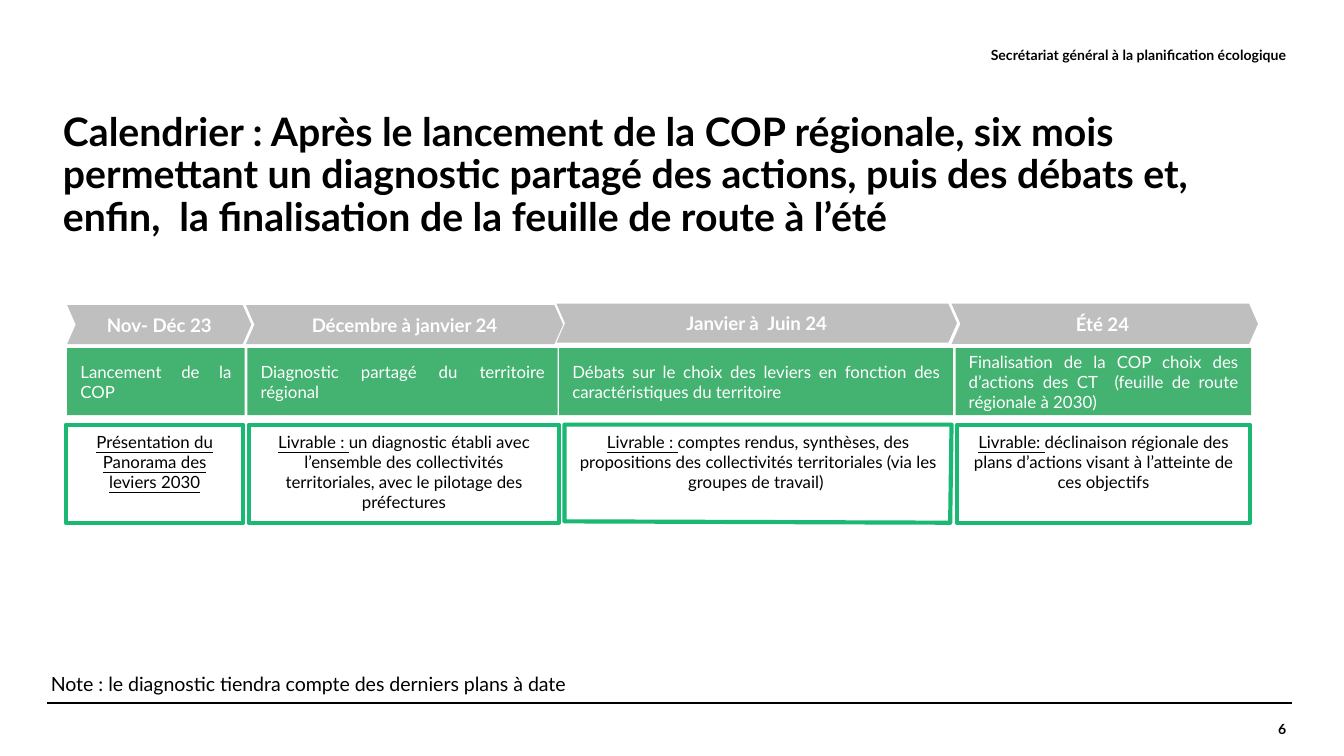
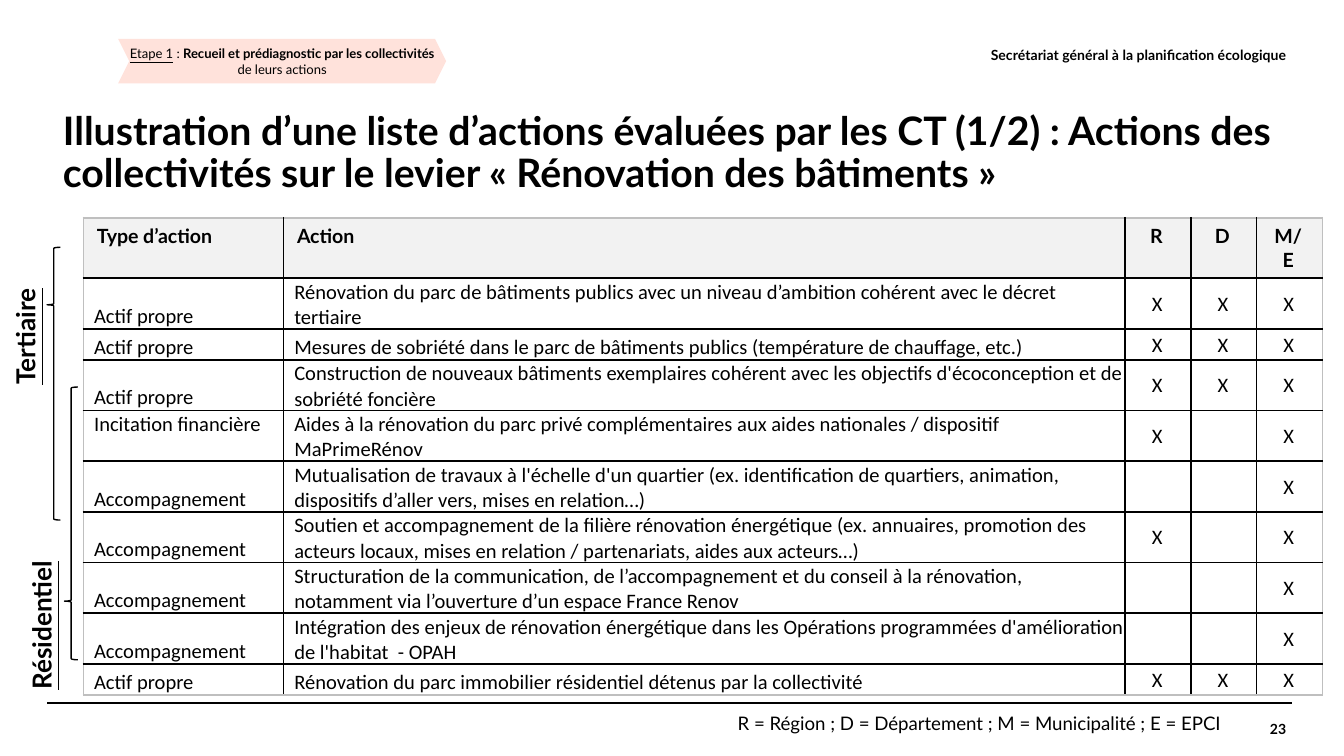
from lxml import etree
from pptx import Presentation
from pptx import util as u
from pptx.dml import color
from pptx.enum import shapes, text
from pptx.oxml import ns

BLACK, WHITE, GREY = "000000", "FFFFFF", "BFBFBF"
PALE_GREY, GREEN, BORDER_GREEN, PINK = "F2F2F2", "44B270", "1AB873", "FFE2DB"
LEFT, CENTER, RIGHT, JUSTIFY = (text.PP_ALIGN.LEFT, text.PP_ALIGN.CENTER,
                                text.PP_ALIGN.RIGHT, text.PP_ALIGN.JUSTIFY)
TOP, MIDDLE, BOTTOM = (text.MSO_ANCHOR.TOP, text.MSO_ANCHOR.MIDDLE,
                       text.MSO_ANCHOR.BOTTOM)
DEFAULT_INSETS = (0.1, 0.05, 0.1, 0.05)

# Timeline stages: chevron box, then left and width of theme and deliverable
STAGES = [
    dict(period="Nov- Déc 23", chevron=(0.5, 2.27, 1.37, 0.29),
         theme="Lancement de la COP", theme_span=(0.5, 1.32),
         deliverable=[("Présentation du Panorama des leviers 2030", {"underline": True})],
         span=(0.49, 1.32)),
    dict(period="Décembre à janvier 24", chevron=(1.83, 2.27, 2.36, 0.29),
         theme="Diagnostic partagé du territoire régional", theme_span=(1.84, 2.31),
         deliverable=[("Livrable : ", {"underline": True}),
                      "un diagnostic établi avec l’ensemble des collectivités "
                      "territoriales, avec le pilotage des préfectures"],
         span=(1.85, 2.31)),
    dict(period="Janvier à  Juin 24", chevron=(4.14, 2.26, 2.98, 0.29),
         theme="Débats sur le choix des leviers en fonction des caractéristiques du territoire",
         theme_span=(4.16, 2.93),
         deliverable=[("Livrable : ", {"underline": True}),
                      "comptes rendus, synthèses, des propositions des collectivités "
                      "territoriales (via les groupes de travail) "],
         span=(4.2, 2.88), slanted=True),
    dict(period="Été 24 ", chevron=(7.08, 2.26, 2.28, 0.3),
         theme="Finalisation de la COP choix des d’actions des CT  "
               "(feuille de route régionale à 2030) ",
         theme_span=(7.11, 2.2),
         deliverable=[("Livrable: ", {"underline": True}),
                      "déclinaison régionale des plans d’actions visant à l’atteinte "
                      "de ces objectifs"],
         span=(7.12, 2.18)),
]

HEADINGS = ["Type d’action", "Action", "R", "D", "M/E"]
# Type of action, action, levels of government concerned
ACTIONS = [
    ("Actif propre", "Rénovation du parc de bâtiments publics avec un niveau d’ambition "
     "cohérent avec le décret tertiaire", "RDM"),
    ("Actif propre", "Mesures de sobriété dans le parc de bâtiments publics "
     "(température de chauffage, etc.)", "RDM"),
    ("Actif propre", "Construction de nouveaux bâtiments exemplaires cohérent avec les "
     "objectifs d'écoconception et de sobriété foncière", "RDM"),
    ("Incitation financière", "Aides à la rénovation du parc privé complémentaires aux "
     "aides nationales / dispositif MaPrimeRénov", "RM"),
    ("Accompagnement", "Mutualisation de travaux à l'échelle d'un quartier (ex. "
     "identification de quartiers, animation, dispositifs d’aller vers, mises en "
     "relation…)", "M"),
    ("Accompagnement", "Soutien et accompagnement de la filière rénovation énergétique "
     "(ex. annuaires, promotion des acteurs locaux, mises en relation / partenariats, "
     "aides aux acteurs…)", "RM"),
    ("Accompagnement", "Structuration de la communication, de l’accompagnement et du "
     "conseil à la rénovation, notamment via l’ouverture d’un espace France Renov", "M"),
    ("Accompagnement", "Intégration des enjeux de rénovation énergétique dans les "
     "Opérations programmées d'amélioration de l'habitat  - OPAH", "M"),
    ("Actif propre", "Rénovation du parc immobilier résidentiel détenus par la "
     "collectivité", "RDM"),
]


def rgb(value):
    return color.RGBColor.from_string(value)


def inches(box):
    return [u.Inches(value) for value in box]


def write(holder, runs, size=9, font="Lato", ink=BLACK, bold=False, align=LEFT,
          anchor=TOP, insets=DEFAULT_INSETS, spacing=None, margin=0):
    """Fill a shape or cell with one paragraph; a run is a string or (string, format)."""
    frame = holder.text_frame
    # A cell keeps its insets and anchor itself, a shape keeps them in its frame
    area = holder if hasattr(holder, "vertical_anchor") else frame
    area.vertical_anchor = anchor
    area.margin_left, area.margin_top, area.margin_right, area.margin_bottom = inches(insets)
    paragraph = frame.paragraphs[0]
    paragraph.alignment = align
    if spacing:
        paragraph.line_spacing = spacing
    if margin:
        paragraph._p.get_or_add_pPr().set("marL", str(u.Inches(margin)))
    for item in [runs] if isinstance(runs, str) else runs:
        words, style = (item, {}) if isinstance(item, str) else item
        if not words:
            continue
        run = paragraph.add_run()
        run.text = words
        run.font.name, run.font.size = font, u.Pt(size)
        run.font.color.rgb = rgb(ink)
        run.font.bold = style.get("bold", bold)
        run.font.underline = style.get("underline", False)


def add_text(slide, box, runs, rotation=0, wrap=True, grow=False, **style):
    shape = slide.shapes.add_textbox(*inches(box))
    shape.text_frame.word_wrap = wrap
    if grow:
        shape.text_frame.auto_size = text.MSO_AUTO_SIZE.SHAPE_TO_FIT_TEXT
    write(shape, runs, **style)
    shape.rotation = rotation


def paint(shape, fill=None, line=None, width=1):
    shape.shadow.inherit = False
    if fill:
        shape.fill.solid()
        shape.fill.fore_color.rgb = rgb(fill)
    else:
        shape.fill.background()
    if line:
        shape.line.color.rgb = rgb(line)
        shape.line.width = u.Pt(width)
    else:
        shape.line.fill.background()


def add_preset(slide, kind, box, adjustments=(), **look):
    shape = slide.shapes.add_shape(kind, *inches(box))
    for index, value in enumerate(adjustments):
        shape.adjustments[index] = value
    paint(shape, **look)
    return shape


def add_frame(slide, number, title, title_box):
    """Parts shared by all slides: rules, page number, header and title."""
    for left in (0.35, 0.39):
        rule = slide.shapes.add_connector(
            shapes.MSO_CONNECTOR.STRAIGHT, *inches((left, 5.23, left + 9.22, 5.23)))
        rule.line.color.rgb = rgb(BLACK)
        rule.line.width = u.Pt(0.8)
        etree.SubElement(rule._element.spPr, ns.qn("a:effectLst"))
    small = dict(size=7.5, bold=True, align=RIGHT, anchor=MIDDLE, insets=(0, 0, 0, 0))
    add_text(slide, (8.09, 5.23, 1.48, 0.39), number, **small)
    add_text(slide, (3.14, 0.21, 6.43, 0.39),
             "Secrétariat général à la planification écologique", **small)
    add_text(slide, title_box, title, size=21, bold=True, anchor=MIDDLE,
             spacing=0.9, margin=0.02)


def add_stage(slide, stage, theme_top, deliverable_top):
    """One column of the timeline: period, theme and deliverable."""
    period = add_preset(slide, shapes.MSO_SHAPE.CHEVRON, stage["chevron"], [0.221], fill=GREY)
    write(period, stage["period"], size=10, ink=WHITE, bold=True,
          align=CENTER, anchor=MIDDLE)

    left, width = stage["theme_span"]
    theme = add_preset(slide, shapes.MSO_SHAPE.RECTANGLE,
                       (left, theme_top, width, 0.5), fill=GREEN)
    write(theme, stage["theme"], ink=WHITE, align=JUSTIFY, anchor=MIDDLE)

    left, width = stage["span"]
    height = 0.73
    outline = dict(line=BORDER_GREEN, width=2.25)
    if stage.get("slanted"):
        right, bottom = left + width, deliverable_top + height
        builder = slide.shapes.build_freeform(*inches((left, deliverable_top)), scale=1.0)
        builder.add_line_segments(
            [inches(point) for point in ((right, deliverable_top), (right - 0.01, bottom),
                                         (left, bottom - 0.01))])
        deliverable = builder.convert_to_shape()
        paint(deliverable, **outline)
    else:
        deliverable = add_preset(slide, shapes.MSO_SHAPE.RECTANGLE,
                                 (left, deliverable_top, width, height), **outline)
    write(deliverable, stage["deliverable"], align=CENTER)


def set_borders(cell, colours):
    properties = cell._tc.get_or_add_tcPr()
    for side, colour in zip("LRTB", colours):
        line = etree.SubElement(properties, ns.qn("a:ln" + side), w=str(u.Pt(1)))
        fill = etree.SubElement(line, ns.qn("a:solidFill"))
        etree.SubElement(fill, ns.qn("a:srgbClr"), val=colour)


def cell_style(row, column, value):
    is_level = column > 1
    if row == 0:
        return dict(size=10.5, bold=True, align=CENTER if is_level else LEFT,
                    insets=(0.1, 0.05, 0.12, 0.05) if is_level else DEFAULT_INSETS)
    if is_level:
        return dict(size=11, font="Calibri", anchor=MIDDLE, insets=(0.2, 0.01, 0.01, 0))
    return dict(size=11, font="Calibri", insets=(0.08, 0.01, 0, 0),
                anchor=TOP if value == "Incitation financière" else BOTTOM)


def add_action_table(slide, left, top, widths, row_height, height):
    rows = [HEADINGS] + [[kind, action] + ["X" if level in levels else "" for level in "RDM"]
                         for kind, action, levels in ACTIONS]
    last_row, last_column = len(rows) - 1, len(widths) - 1
    frame = slide.shapes.add_table(len(rows), len(widths),
                                   *inches((left, top, sum(widths), height)))
    table = frame.table
    table.first_row = table.horz_banding = False
    for column, width in zip(table.columns, widths):
        column.width = u.Inches(width)
    for r, values in enumerate(rows):
        table.rows[r].height = u.Inches(row_height)
        for c, value in enumerate(values):
            cell = table.cell(r, c)
            edges = (c == 0, c == last_column, r == 0, r == last_row)
            set_borders(cell, [GREY if edge else BLACK for edge in edges])
            if r == 0:
                cell.fill.solid()
                cell.fill.fore_color.rgb = rgb(PALE_GREY)
            else:
                cell.fill.background()
            write(cell, value, **cell_style(r, c, value))
    frame.height = u.Inches(height)


def add_sector(slide, name, brace_at, tip, label_box):
    """A brace beside the table with its upright label."""
    add_preset(slide, shapes.MSO_SHAPE.LEFT_BRACE, (*brace_at, 0.1, 2.03),
               [0.083, tip], line=BLACK, width=0.75)
    add_text(slide, label_box, [(name, {"underline": True})], rotation=270,
             size=14, bold=True, wrap=False, grow=True)


def build_calendar(slide):
    add_frame(slide, "6", "Calendrier : Après le lancement de la COP régionale, six mois "
              "permettant un diagnostic partagé des actions, puis des débats et, enfin,  "
              "la finalisation de la feuille de route à l’été", (0.35, 0.78, 9.21, 1.06))
    for stage in STAGES:
        add_stage(slide, stage, theme_top=2.59, deliverable_top=3.16)
    add_text(slide, (0.28, 4.95, 6.61, 0.29),
             "Note : le diagnostic tiendra compte des derniers plans à date",
             size=10.5, grow=True)


def build_actions(slide):
    add_frame(slide, "23", "Illustration d’une liste d’actions évaluées par les CT (1/2) : "
              "Actions des collectivités sur le levier « Rénovation des bâtiments »",
              (0.35, 0.95, 9.28, 0.39))
    add_action_table(slide, 0.62, 1.62, [1.49, 6.26, 0.49, 0.49, 0.49], 0.23, 3.36)
    add_text(slide, (5.39, 5.25, 4.61, 0.27),
             "R = Région ; D = Département ; M = Municipalité ; E = EPCI", size=10, grow=True)
    add_sector(slide, "Tertiaire", (0.35, 1.84), 0.211, (-0.32, 2.28, 1.02, 0.34))
    add_sector(slide, "Résidentiel", (0.48, 2.88), 0.785, (-0.32, 4.43, 1.26, 0.34))
    # Step marker
    step = add_preset(slide, shapes.MSO_SHAPE.CHEVRON, (0.88, 0.29, 2.44, 0.33),
                      [0.25], fill=PINK)
    write(step,
          [("Etape 1", {"underline": True}), " : ",
           ("Recueil et prédiagnostic par les collectivités ", {"bold": True}),
           "de leurs actions"],
          size=7, align=CENTER, anchor=MIDDLE, insets=(0, 0.05, 0, 0.05))


def main():
    presentation = Presentation()
    presentation.slide_width = u.Inches(10)
    presentation.slide_height = presentation.slide_width * 9 // 16
    for build in (build_calendar, build_actions):
        build(presentation.slides.add_slide(presentation.slide_layouts[6]))
    presentation.save("out.pptx")


if __name__ == "__main__":
    main()
